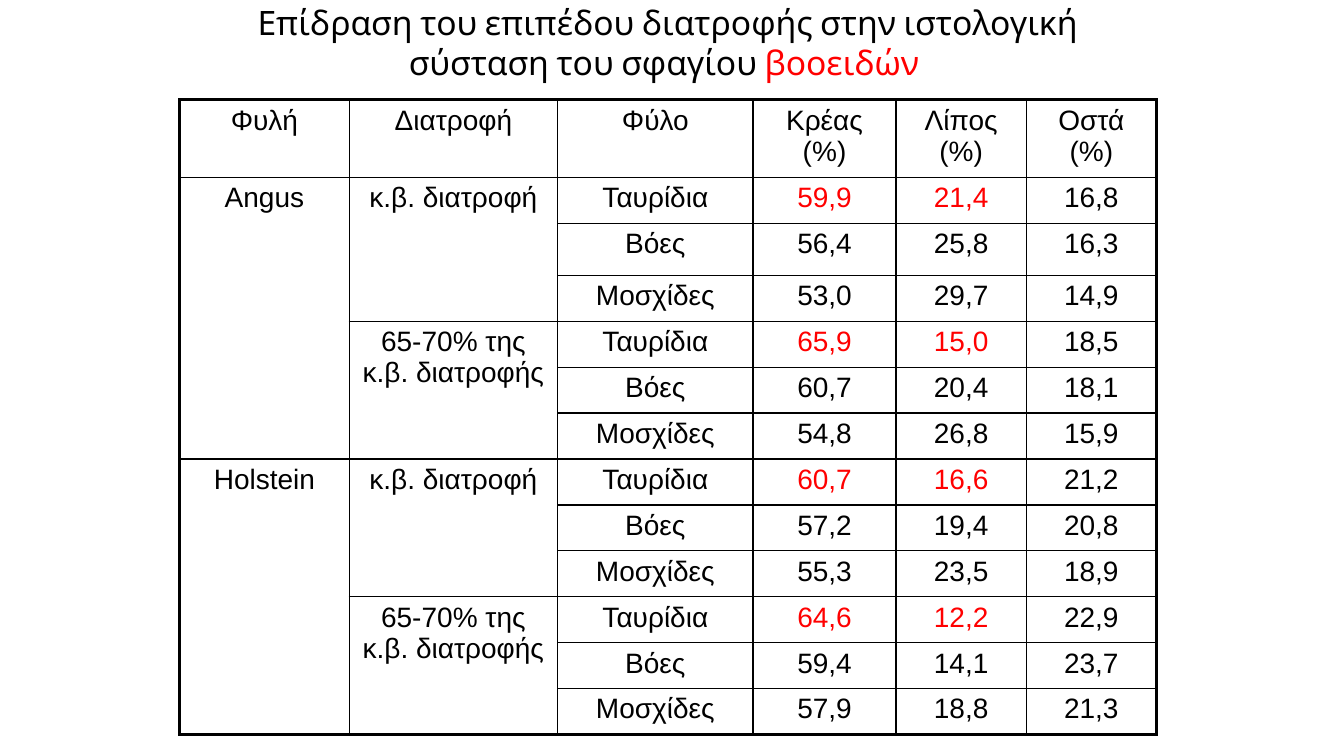
from lxml.etree import SubElement
from pptx import Presentation
from pptx.dml.color import RGBColor
from pptx.enum.text import PP_ALIGN
from pptx.oxml.ns import qn
from pptx.util import Pt

BLACK = RGBColor(0x00, 0x00, 0x00)
RED = RGBColor(0xFF, 0x00, 0x00)

TITLE = [
    ("Επίδραση του επιπέδου διατροφής στην ιστολογική σύσταση του σφαγίου ", BLACK),
    ("βοοειδών ", RED),
]
HEADERS = ["Φυλή", "Διατροφή", "Φύλο", "Κρέας (%)", "Λίπος (%)", "Οστά (%)"]
BREEDS = ["Angus", "Holstein"]
DIETS = ["κ.β. διατροφή", "65-70% της κ.β. διατροφής"]
SEXES = ["Ταυρίδια", "Βόες", "Μοσχίδες"]
# Meat, fat and bone, ordered by breed, diet and sex
COMPOSITION = [
    ("59,9", "21,4", "16,8"),
    ("56,4", "25,8", "16,3"),
    ("53,0", "29,7", "14,9"),
    ("65,9", "15,0", "18,5"),
    ("60,7", "20,4", "18,1"),
    ("54,8", "26,8", "15,9"),
    ("60,7", "16,6", "21,2"),
    ("57,2", "19,4", "20,8"),
    ("55,3", "23,5", "18,9"),
    ("64,6", "12,2", "22,9"),
    ("59,4", "14,1", "23,7"),
    ("57,9", "18,8", "21,3"),
]

COLUMN_WIDTHS = [121, 149, 139.5, 102.2, 93, 93]
ROW_HEIGHTS = [55.4, 32.8, 37.2] + [32.8] * 10
TABLE_LEFT, TABLE_TOP = 128.4, 71.3
THIN, THICK = 1, 2.25


def add_run(paragraph, text, font_name, size, color):
    run = paragraph.add_run()
    run.text = text
    run.font.name = font_name
    run.font.size = Pt(size)
    run.font.color.rgb = color


def write_cell(cell, text, color=BLACK):
    paragraph = cell.text_frame.paragraphs[0]
    paragraph.alignment = PP_ALIGN.CENTER
    add_run(paragraph, text, "Arial", 20, color)


def merge_down(table, row, column, count, text):
    cell = table.cell(row, column)
    cell.merge(table.cell(row + count - 1, column))
    write_cell(cell, text)


def draw_borders(cell, row, column):
    """Thick lines on the table's outer edges, thin lines inside."""
    last_row = row + cell.span_height
    outer_edges = {
        "a:lnL": column == 0,
        "a:lnR": column == len(HEADERS) - 1,
        "a:lnT": row == 0,
        "a:lnB": last_row == len(ROW_HEIGHTS),
    }
    properties = cell._tc.get_or_add_tcPr()
    for tag, is_outer in outer_edges.items():
        width = Pt(THICK if is_outer else THIN)
        line = SubElement(properties, qn(tag), w=str(int(width)))
        fill = SubElement(line, qn("a:solidFill"))
        SubElement(fill, qn("a:srgbClr"), val=str(BLACK))


def add_title(slide):
    title = slide.shapes.add_textbox(Pt(133.9), Pt(-2.2), Pt(686.2), Pt(65.5))
    title.text_frame.word_wrap = True
    paragraph = title.text_frame.paragraphs[0]
    paragraph.alignment = PP_ALIGN.CENTER
    for text, color in TITLE:
        add_run(paragraph, text, "Cabin", 24, color)


def add_composition_table(slide):
    table = slide.shapes.add_table(
        len(ROW_HEIGHTS), len(HEADERS), Pt(TABLE_LEFT), Pt(TABLE_TOP),
        Pt(sum(COLUMN_WIDTHS)), Pt(sum(ROW_HEIGHTS))).table
    table.first_row = False
    table.horz_banding = False
    for column, width in zip(table.columns, COLUMN_WIDTHS):
        column.width = Pt(width)
    for row, height in zip(table.rows, ROW_HEIGHTS):
        row.height = Pt(height)

    for column, header in enumerate(HEADERS):
        write_cell(table.cell(0, column), header)

    diet_rows = len(SEXES)
    breed_rows = diet_rows * len(DIETS)
    for b, breed in enumerate(BREEDS):
        breed_top = 1 + b * breed_rows
        merge_down(table, breed_top, 0, breed_rows, breed)
        for d, diet in enumerate(DIETS):
            merge_down(table, breed_top + d * diet_rows, 1, diet_rows, diet)

    for index, (meat, fat, bone) in enumerate(COMPOSITION):
        row = index + 1
        sex = SEXES[index % len(SEXES)]
        highlight = RED if sex == "Ταυρίδια" else BLACK
        write_cell(table.cell(row, 2), sex)
        write_cell(table.cell(row, 3), meat, highlight)
        write_cell(table.cell(row, 4), fat, highlight)
        write_cell(table.cell(row, 5), bone)

    for row in range(len(ROW_HEIGHTS)):
        for column in range(len(HEADERS)):
            cell = table.cell(row, column)
            if not cell.is_spanned:
                draw_borders(cell, row, column)
            cell.fill.background()


def main():
    presentation = Presentation()
    presentation.slide_width = Pt(960)
    presentation.slide_height = Pt(540)
    slide = presentation.slides.add_slide(presentation.slide_layouts[6])
    add_composition_table(slide)
    add_title(slide)
    presentation.save("out.pptx")


if __name__ == "__main__":
    main()
